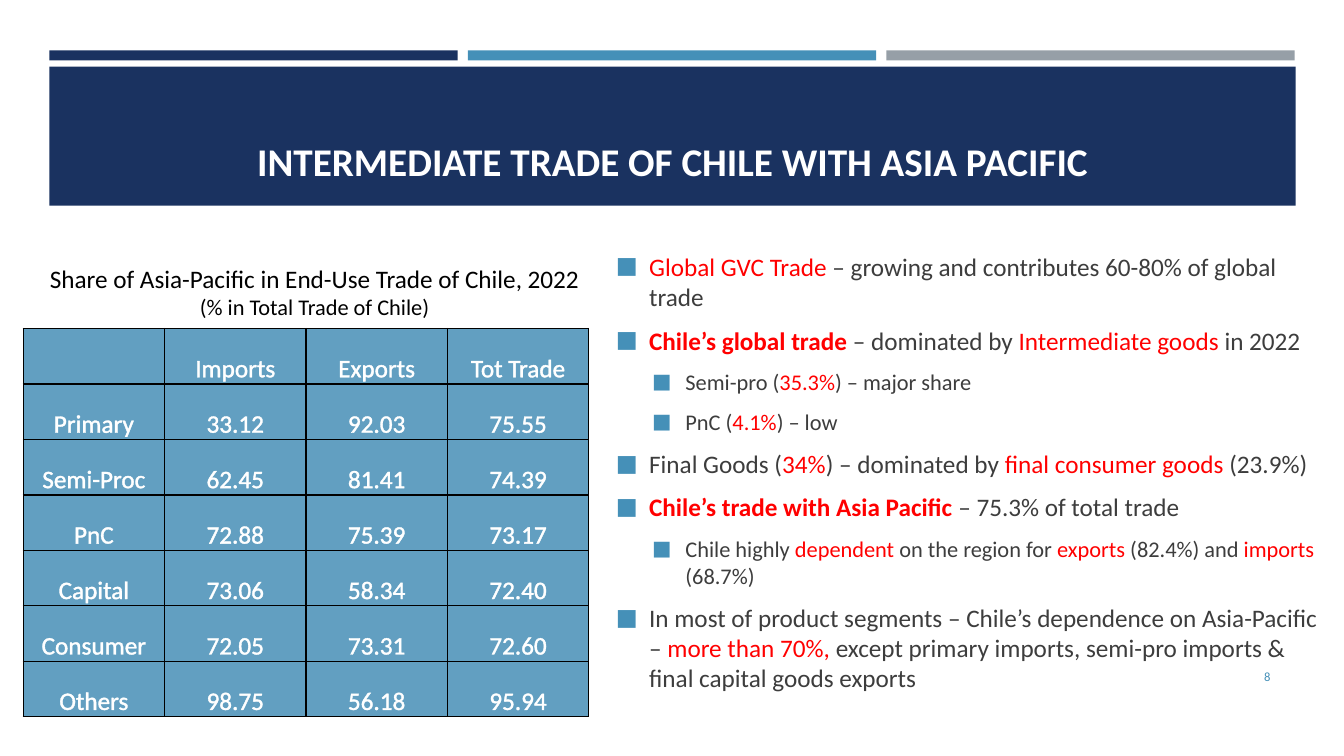
from dataclasses import dataclass

from lxml import etree
from pptx import Presentation
from pptx import util as u
from pptx.dml.color import RGBColor
from pptx.enum import shapes, text
from pptx.oxml import ns


@dataclass(frozen=True)
class Theme:
    font: str = "Calibri"
    navy: str = "1A3260"
    blue: str = "4590B8"
    gray: str = "969FA7"
    cell: str = "629FC1"
    ink: str = "3D3D3D"
    red: str = "FF0000"
    white: str = "FFFFFF"
    black: str = "000000"
    title: int = 28
    body: int = 18
    sub: int = 16
    small: int = 9


T = Theme()
ALIGN = text.PP_ALIGN
ANCHOR = text.MSO_ANCHOR

TRADE = [
    ("", "Imports", "Exports", "Tot Trade"),
    ("Primary", "33.12", "92.03", "75.55"),
    ("Semi-Proc", "62.45", "81.41", "74.39"),
    ("PnC", "72.88", "75.39", "73.17"),
    ("Capital", "73.06", "58.34", "72.40"),
    ("Consumer", "72.05", "73.31", "72.60"),
    ("Others", "98.75", "56.18", "95.94"),
]

# Level, bold lead, text with *red* parts
POINTS = [
    (0, False, "*Global GVC Trade *– growing and contributes 60-80% of global trade"),
    (0, True, "*Chile’s global trade *– dominated by *Intermediate goods *in 2022"),
    (1, False, "Semi-pro (*35.3%*) – major share"),
    (1, False, "PnC (*4.1%*) – low"),
    (0, False, "Final Goods (*34%*) – dominated by *final consumer goods *(23.9%)"),
    (0, True, "*Chile’s trade with Asia Pacific *– 75.3% of total trade"),
    (1, False, "Chile highly *dependent* on the region for *exports* (82.4%) and *imports* (68.7%)"),
    (0, False, "In most of product segments – Chile’s dependence on Asia-Pacific – "
               "*more than 70%, *except primary imports, semi-pro imports & final capital goods exports"),
]


def rgb(code):
    return RGBColor.from_string(code)


def add_node(parent, tag, **attrs):
    return etree.SubElement(parent, ns.qn(tag), attrs)


def add_color(parent, code):
    add_node(parent, "a:srgbClr", val=code)


def set_font(para, size, color):
    para.font.name = T.font
    para.font.size = u.Pt(size)
    para.font.color.rgb = rgb(color)


def add_bar(slide, left, top, width, height, color):
    bar = slide.shapes.add_shape(
        shapes.MSO_SHAPE.RECTANGLE, *map(u.Inches, (left, top, width, height)))
    bar.shadow.inherit = False
    bar.fill.solid()
    bar.fill.fore_color.rgb = rgb(color)
    bar.line.fill.background()


def add_box(slide, left, top, width, height, anchor=ANCHOR.TOP):
    box = slide.shapes.add_textbox(*map(u.Inches, (left, top, width, height)))
    frame = box.text_frame
    frame.word_wrap = True
    frame.vertical_anchor = anchor
    return frame


def add_para(frame, first):
    return frame.paragraphs[0] if first else frame.add_paragraph()


def add_label(slide, place, lines, color, align, anchor=ANCHOR.TOP, bold=False):
    frame = add_box(slide, *place, anchor)
    for i, (words, size) in enumerate(lines):
        para = add_para(frame, i == 0)
        para.text = words
        para.alignment = align
        set_font(para, size, color)
        para.font.bold = bold


def add_bullet(para, level):
    props = para._p.get_or_add_pPr()
    props.set("marL", str(u.Inches(0.33 + 0.36 * level)))
    props.set("indent", str(u.Inches(-0.33)))
    add_color(add_node(props, "a:buClr"), T.blue)
    add_node(props, "a:buSzPct", val="92000")
    add_node(props, "a:buFont", typeface=T.font)
    add_node(props, "a:buChar", char="■")


def add_points(slide, place, points):
    frame = add_box(slide, *place)
    for i, (level, bold, words) in enumerate(points):
        para = add_para(frame, i == 0)
        para.level = level
        add_bullet(para, level)
        size = T.sub if level else T.body
        para.space_before = u.Pt(size * 0.2)
        para.space_after = u.Pt(6)
        set_font(para, size, T.ink)
        for j, part in enumerate(words.split("*")):
            if not part:
                continue
            run = para.add_run()
            run.text = part
            if j % 2:
                run.font.color.rgb = rgb(T.red)
            if bold and j == 1:
                run.font.bold = True


def add_edges(cell):
    props = cell._tc.get_or_add_tcPr()
    for side in "LRTB":
        edge = add_node(props, f"a:ln{side}", w=str(u.Pt(1)))
        add_color(add_node(edge, "a:solidFill"), T.black)


def add_outline(run):
    line = etree.Element(ns.qn("a:ln"), w=str(u.Pt(0.75)))
    add_color(add_node(line, "a:solidFill"), T.white)
    run._r.get_or_add_rPr().insert(0, line)


def fill_cell(cell, words):
    add_edges(cell)
    cell.fill.solid()
    cell.fill.fore_color.rgb = rgb(T.cell)
    cell.vertical_anchor = ANCHOR.BOTTOM
    cell.margin_left = cell.margin_right = cell.margin_top = u.Inches(0.01)
    cell.margin_bottom = 0
    para = cell.text_frame.paragraphs[0]
    para.alignment = ALIGN.CENTER
    set_font(para, T.body, T.white)
    if words:
        run = para.add_run()
        run.text = words
        add_outline(run)


def add_grid(slide, place, rows):
    table = slide.shapes.add_table(
        len(rows), len(rows[0]), *map(u.Inches, place)).table
    for r, row in enumerate(rows):
        for c, words in enumerate(row):
            fill_cell(table.cell(r, c), words)


def main():
    deck = Presentation()
    deck.slide_width, deck.slide_height = u.Inches(13.33), u.Inches(7.5)
    slide = deck.slides.add_slide(deck.slide_layouts[6])

    # Header band
    for i, color in enumerate((T.navy, T.blue, T.gray)):
        add_bar(slide, 0.49 + 4.15 * i, 0.5, 4.05, 0.1, color)
    add_bar(slide, 0.49, 0.66, 12.36, 1.38, T.navy)
    add_label(slide, (0.64, 0.8, 12.06, 1.08),
              [("INTERMEDIATE TRADE OF CHILE WITH ASIA PACIFIC", T.title)],
              T.white, ALIGN.CENTER, ANCHOR.BOTTOM, bold=True)

    # Trade table and its caption
    add_grid(slide, (0.23, 3.26, 5.61, 3.85), TRADE)
    add_label(slide, (0.33, 2.56, 5.58, 0.67),
              [("Share of Asia-Pacific in End-Use Trade of Chile, 2022", T.body),
               ("(% in Total Trade of Chile)", T.sub)],
              T.black, ALIGN.CENTER)

    # Findings and page number
    add_points(slide, (6.01, 2.44, 7.21, 4.94), POINTS)
    add_label(slide, (11.55, 6.51, 1.15, 0.4), [("8", T.small)],
              T.blue, ALIGN.RIGHT, ANCHOR.MIDDLE)

    deck.save("out.pptx")


if __name__ == "__main__":
    main()
